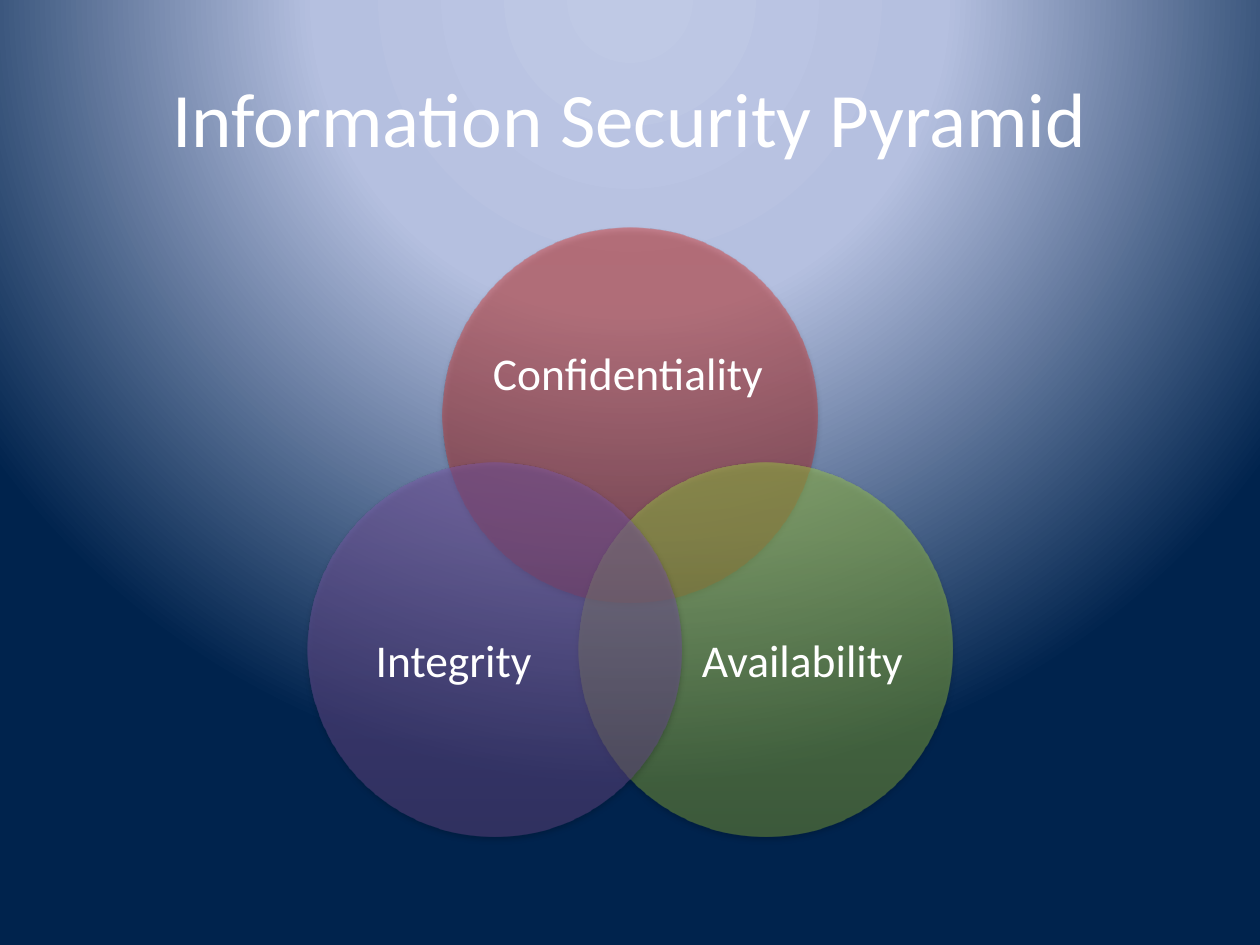
from dataclasses import dataclass
from math import cos, radians, sin

from lxml import etree
from pptx import Presentation
from pptx.dml.color import RGBColor
from pptx.enum.shapes import MSO_SHAPE
from pptx.enum.text import MSO_ANCHOR, PP_ALIGN
from pptx.oxml.ns import qn
from pptx.util import Cm, Pt

OVAL = MSO_SHAPE.OVAL
MIDDLE = MSO_ANCHOR.MIDDLE
CENTER = PP_ALIGN.CENTER


@dataclass(frozen=True)
class Theme:
    font: str = "Calibri"
    text: str = "FFFFFF"
    head: int = 44
    label: int = 26
    back: tuple = ((0, "BFC9E5"), (40, "B5C0E0"), (100, "00234D"))
    red: tuple = ((0, "9C2F2D"), (80, "CB3E3A"), (100, "CE3B37"))
    green: tuple = ((0, "779737"), (80, "9BC348"), (100, "9DC746"))
    violet: tuple = ((0, "5F4480"), (80, "7B58A6"), (100, "7C57A8"))
    shade: str = "000000"


THEME = Theme()

# Circles from back to front: label, stops, angle from the top,
# label box as fractions of the circle (left, top, width, height)
RINGS = (
    ("Confidentiality", THEME.red, 0, (0.13, 0.17, 0.73, 0.45)),
    ("Availability", THEME.green, 120, (0.3, 0.26, 0.6, 0.55)),
    ("Integrity", THEME.violet, 240, (0.09, 0.26, 0.6, 0.55)),
)


def node(parent, tag, **attrs):
    """Add a child element with the given attributes."""
    values = {key: str(val) for key, val in attrs.items()}
    return etree.SubElement(parent, qn(tag), values)


def tint(parent, color, alpha):
    """Add a colour with an opacity in percent."""
    clr = node(parent, "a:srgbClr", val=color)
    if alpha < 100:
        node(clr, "a:alpha", val=alpha * 1000)


def blend(fill, owner, stops, alpha=100):
    """Set gradient stops and return the emptied gradient element."""
    fill.gradient()
    grad = owner.find(".//" + qn("a:gradFill"))
    for child in list(grad):
        grad.remove(child)
    items = node(grad, "a:gsLst")
    for pos, color in stops:
        tint(node(items, "a:gs", pos=pos * 1000), color, alpha)
    return grad


def write(shapes, box, text, size, inset=None, lead=None):
    """Place centred text in a box of centimetres."""
    frame = shapes.add_textbox(*map(Cm, box)).text_frame
    frame.text = text
    frame.word_wrap = True
    frame.vertical_anchor = MIDDLE
    if inset is not None:
        frame.margin_left = frame.margin_right = Cm(inset)
        frame.margin_top = frame.margin_bottom = Cm(inset)
    para = frame.paragraphs[0]
    para.alignment = CENTER
    para.line_spacing = lead
    font = para.runs[0].font
    font.name = THEME.font
    font.size = Pt(size)
    font.color.rgb = RGBColor.from_string(THEME.text)


def glow(slide):
    """Radial background centred above the slide."""
    grad = blend(slide.background.fill, slide.element, THEME.back)
    path = node(grad, "a:path", path="circle")
    node(path, "a:fillToRect", l=50000, t=-80000, r=50000, b=180000)


def disc(shapes, box, stops):
    """Half-clear circle with a soft shadow."""
    shape = shapes.add_shape(OVAL, *map(Cm, box))
    grad = blend(shape.fill, shape.element, stops, 50)
    node(grad, "a:lin", ang=270 * 60000, scaled=0)
    shape.line.fill.background()
    shape.shadow.inherit = False
    effect = shape.element.find(".//" + qn("a:effectLst"))
    cast = node(effect, "a:outerShdw", blurRad=Pt(3.1), dist=Pt(1.8),
                dir=90 * 60000, rotWithShape=0)
    tint(cast, THEME.shade, 35)


def venn(slide, box):
    """Three overlapping circles set evenly around one centre."""
    x, y, w, _ = box
    size = 0.58 * w
    reach = 0.242 * w
    shapes = slide.shapes.add_group_shape().shapes
    for text, stops, turn, part in RINGS:
        left = x + w / 2 + reach * sin(radians(turn)) - size / 2
        top = y + reach * (1 - cos(radians(turn)))
        disc(shapes, (left, top, size, size), stops)
        px, py, pw, ph = (size * p for p in part)
        write(shapes, (left + px, top + py, pw, ph), text,
              THEME.label, inset=0, lead=0.9)


def main():
    deck = Presentation()
    deck.slide_width, deck.slide_height = Cm(25.4), Cm(19.05)
    slide = deck.slides.add_slide(deck.slide_layouts[6])
    glow(slide)
    # Title
    write(slide.shapes, (1.27, 0.76, 22.86, 3.18),
          "Information Security Pyramid", THEME.head)
    # Diagram
    venn(slide, (6.2, 4.6, 13, 12.26))
    deck.save("out.pptx")


if __name__ == "__main__":
    main()
